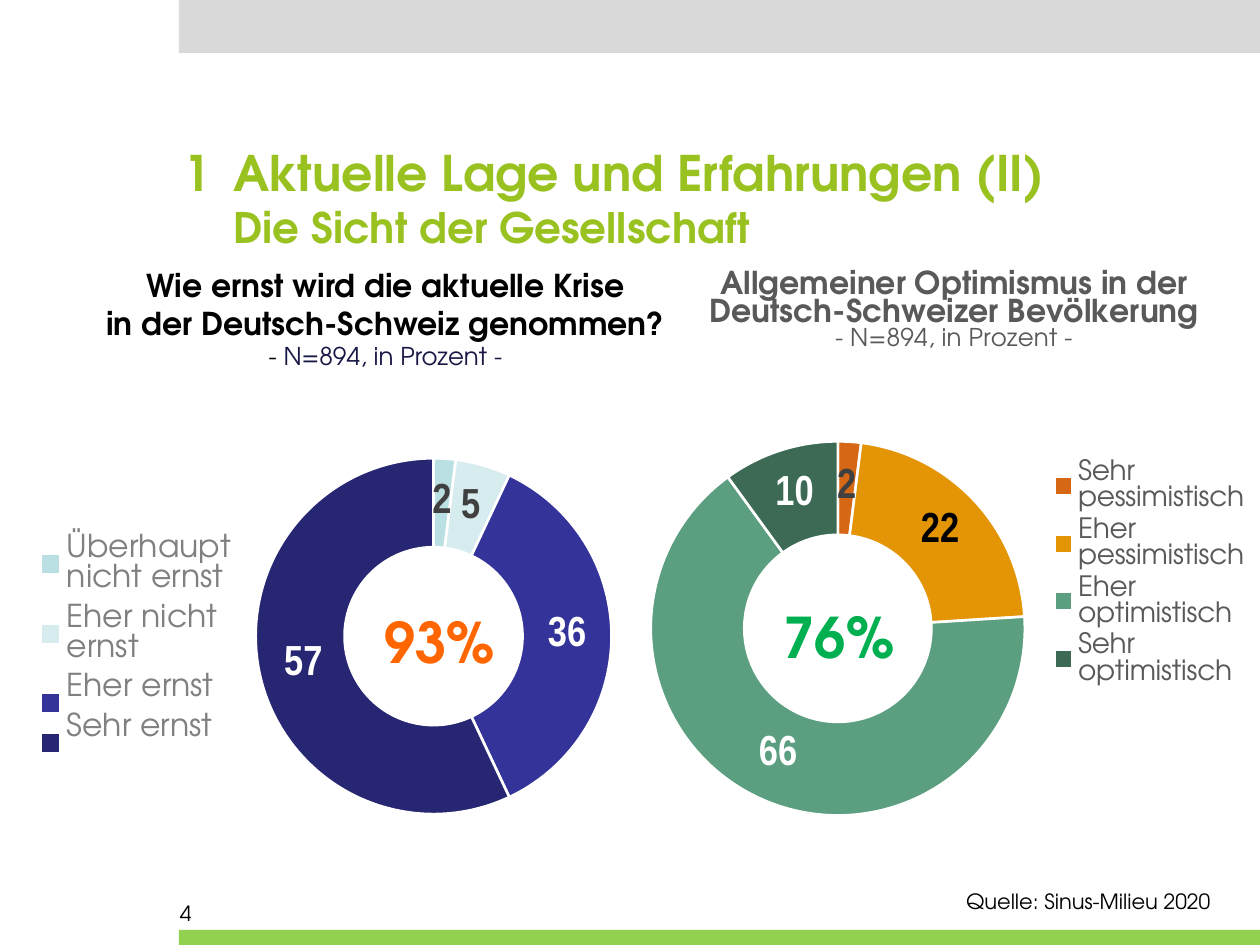
from lxml.etree import SubElement
from pptx import Presentation
from pptx.chart.data import CategoryChartData
from pptx.dml.color import RGBColor
from pptx.enum.chart import XL_CHART_TYPE as ChartType, XL_LEGEND_POSITION as LegendSide
from pptx.enum.shapes import MSO_SHAPE as Shape
from pptx.enum.text import PP_ALIGN as Align
from pptx.oxml.ns import qn
from pptx.util import Inches, Pt

HEADING_FONT = "TeX Gyre Adventor"
LABEL_FONT = "Arial Narrow"
BLACK = RGBColor(0x00, 0x00, 0x00)
WHITE = RGBColor(0xFF, 0xFF, 0xFF)
LIGHT_GRAY = RGBColor(0xD9, 0xD9, 0xD9)
MID_GRAY = RGBColor(0x80, 0x80, 0x80)
DARK_GRAY = RGBColor(0x59, 0x59, 0x59)
LABEL_GRAY = RGBColor(0x40, 0x40, 0x40)
LIME = RGBColor(0x99, 0xC2, 0x21)
BAR_GREEN = RGBColor(0x92, 0xD0, 0x50)
FIGURE_GREEN = RGBColor(0x00, 0xB0, 0x50)
FIGURE_ORANGE = RGBColor(0xFF, 0x66, 0x00)
NAVY = RGBColor(0x17, 0x17, 0x45)
SERIOUS_COLORS = [RGBColor(0xBB, 0xE0, 0xE3), RGBColor(0xD6, 0xEC, 0xEE),
                  RGBColor(0x33, 0x33, 0x99), RGBColor(0x26, 0x26, 0x73)]
OPTIMISM_COLORS = [RGBColor(0xD5, 0x67, 0x15), RGBColor(0xE4, 0x95, 0x06),
                   RGBColor(0x5B, 0x9F, 0x80), RGBColor(0x3D, 0x6A, 0x55)]


def style(size, color=BLACK, bold=False, name=HEADING_FONT):
    """Return a dict of font values."""
    return {"name": name, "size": Pt(size), "bold": bold, "color": color}


def set_font(font, values):
    """Apply a dict of font values."""
    for key, value in values.items():
        if key == "color":
            font.color.rgb = value
        else:
            setattr(font, key, value)


def write_lines(frame, lines, align=None):
    """Write each line, a list of (text, style) spans, as a paragraph."""
    for index, spans in enumerate(lines):
        para = frame.add_paragraph() if index else frame.paragraphs[0]
        para.alignment = align
        for text, values in spans:
            span = para.add_run()
            span.text = text
            set_font(span.font, values)


def add_text(slide, at, lines, align=None, wrap=True):
    """Add a text box and return it."""
    box = slide.shapes.add_textbox(*map(Inches, at))
    box.text_frame.word_wrap = wrap
    write_lines(box.text_frame, lines, align)
    return box


def add_bar(slide, at, color):
    """Add a plain filled bar."""
    bar = slide.shapes.add_shape(Shape.RECTANGLE, *map(Inches, at))
    bar.shadow.inherit = False
    bar.fill.solid()
    bar.fill.fore_color.rgb = color
    bar.line.fill.background()


def add_heading(slide):
    """Add the numbered heading with a hanging indent."""
    box = add_text(slide, (1.46, 1.13, 8.5, 0.95), [
        [("1\tAktuelle Lage und Erfahrungen (II)", style(28, LIME, True))],
        [("Die Sicht der Gesellschaft", style(24, LIME, True))],
    ])
    frame = box.text_frame
    for side in ("left", "top", "right", "bottom"):
        setattr(frame, f"margin_{side}", 0)
    for para, indent in zip(frame.paragraphs, (-0.39, 0)):
        properties = para._p.get_or_add_pPr()
        properties.set("marL", str(Inches(0.39)))
        properties.set("indent", str(Inches(indent)))


def place(chart, tag, position, bounds):
    """Give a chart part a manual layout in fractions of the chart."""
    part = chart.element.find(".//" + qn(tag))
    for old in part.findall(qn("c:layout")):
        part.remove(old)
    layout = part.makeelement(qn("c:layout"))
    part.insert(position, layout)
    manual = SubElement(layout, qn("c:manualLayout"))
    values = {"xMode": "edge", "yMode": "edge", **dict(zip("xywh", bounds))}
    if tag == "c:plotArea":
        values = {"layoutTarget": "inner", **values}
    for key, value in values.items():
        SubElement(manual, qn(f"c:{key}")).set("val", str(value))


def add_doughnut(slide, at, shares, colors, label_colors, side, legend_style, plot, legend):
    """Add a doughnut chart with its legend and value labels."""
    data = CategoryChartData()
    data.categories = list(shares)
    data.add_series("Series 1", list(shares.values()))
    chart = slide.shapes.add_chart(ChartType.DOUGHNUT, *map(Inches, at), data).chart
    set_font(chart.font, style(10, name=LABEL_FONT))
    chart.has_title = False
    chart.has_legend = True
    chart.legend.position = side
    chart.legend.include_in_layout = False
    set_font(chart.legend.font, legend_style)
    chart.plots[0].vary_by_categories = True
    series = chart.plots[0].series[0]
    series.data_labels.show_value = True
    set_font(series.data_labels.font, style(24, LABEL_GRAY, True, LABEL_FONT))
    for index, (color, label_color) in enumerate(zip(colors, label_colors)):
        point = series.points[index]
        point.format.fill.solid()
        point.format.fill.fore_color.rgb = color
        point.format.line.color.rgb = WHITE
        point.format.line.width = Pt(1.5)
        set_font(point.data_label.font, style(24, label_color, True, LABEL_FONT))
    place(chart, "c:plotArea", 0, plot)
    place(chart, "c:legend", 1, legend)
    return chart


def add_optimism_chart(slide):
    """Add the titled chart on optimism."""
    shares = {"Sehr pessimistisch": 2, "Eher pessimistisch": 22,
              "Eher optimistisch": 66, "Sehr optimistisch": 10}
    chart = add_doughnut(
        slide, (5, 1.94, 5, 5.21), shares, OPTIMISM_COLORS,
        (LABEL_GRAY, BLACK, WHITE, WHITE), LegendSide.RIGHT, style(16, DARK_GRAY),
        (0.03, 0.3, 0.6, 0.57), (0.66, 0.32, 0.33, 0.36))
    chart.has_title = True
    write_lines(chart.chart_title.text_frame, [
        [("Allgemeiner Optimismus in der Deutsch-Schweizer Bevölkerung",
          style(18, DARK_GRAY, True))],
        [("- N=894, in Prozent -", style(14, DARK_GRAY))],
    ], Align.CENTER)
    place(chart, "c:title", 1, (0.12, 0.03))


def add_seriousness_chart(slide):
    """Add the chart on how seriously the crisis is taken."""
    shares = {"Überhaupt nicht ernst": 2, "Eher nicht ernst": 5,
              "Eher ernst": 36, "Sehr ernst": 57}
    add_doughnut(
        slide, (0.13, 3.28, 4.87, 3.54), shares, SERIOUS_COLORS,
        (LABEL_GRAY, LABEL_GRAY, WHITE, WHITE), LegendSide.LEFT, style(18, MID_GRAY),
        (0.39, 0.1, 0.58, 0.8), (0.03, 0.25, 0.33, 0.51))


def main():
    """Build and save the slide."""
    deck = Presentation()
    deck.slide_width, deck.slide_height = Inches(10), Inches(7.5)
    slide = deck.slides.add_slide(deck.slide_layouts[6])
    add_bar(slide, (1.42, 0, 8.58, 0.42), LIGHT_GRAY)
    add_bar(slide, (1.42, 7.38, 8.58, 0.12), BAR_GREEN)
    add_heading(slide)
    add_text(slide, (1.33, 7.1, 2.33, 0.4), [[("4", style(12))]])
    add_optimism_chart(slide)
    add_text(slide, (7.57, 7, 2.2, 0.3), [[("Quelle: Sinus-Milieu 2020", style(12))]], wrap=False)
    add_text(slide, (0.67, 2.06, 4.78, 1.25), [
        [("Wie ernst wird die aktuelle Krise", style(18, bold=True))],
        [("in der Deutsch-Schweiz genommen?", style(18, bold=True))],
        [("- ", style(14)), ("N=894, in Prozent -", style(14, NAVY))],
    ], Align.CENTER)
    add_seriousness_chart(slide)
    for left, top, figure, color in ((2.95, 4.77, "93%", FIGURE_ORANGE),
                                     (6.12, 4.73, "76%", FIGURE_GREEN)):
        add_text(slide, (left, top, 1.09, 0.64), [[(figure, style(32, color, True))]], wrap=False)
    deck.save("out.pptx")


if __name__ == "__main__":
    main()
